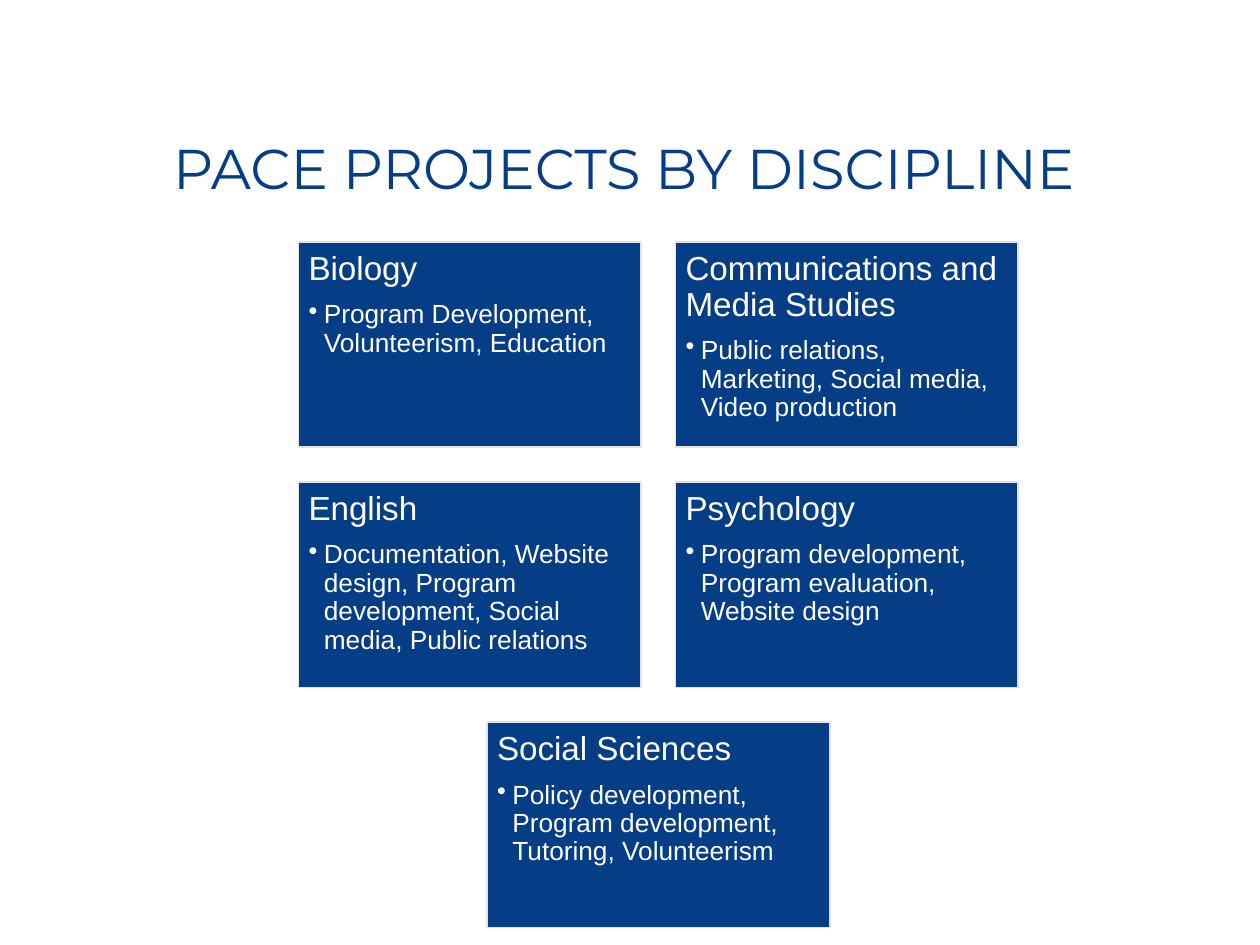
import pptx
import pptx.util
import pptx.dml.color
import pptx.enum.shapes
import pptx.enum.text
from lxml import etree
from pptx.oxml.ns import qn

Cm = pptx.util.Cm
Pt = pptx.util.Pt
RGBColor = pptx.dml.color.RGBColor

BLUE = RGBColor(0x05, 0x3D, 0x87)
TITLE = RGBColor(0x05, 0x3E, 0x87)
EDGE = RGBColor(0xE3, 0xE3, 0xE6)
WHITE = RGBColor(0xFF, 0xFF, 0xFF)

# Card grid, in cm
LEFT, TOP = 6.02, 4.88
WIDTH, HEIGHT = 6.91, 4.14
STEP_X, STEP_Y = 7.6, 4.84

# Column, row, heading, projects
CARDS = [
    (0, 0, "Biology", "Program Development, Volunteerism, Education"),
    (1, 0, "Communications and Media Studies",
     "Public relations, Marketing, Social media, Video production"),
    (0, 1, "English",
     "Documentation, Website design, Program development, "
     "Social media, Public relations"),
    (1, 1, "Psychology",
     "Program development, Program evaluation, Website design"),
    (0.5, 2, "Social Sciences",
     "Policy development, Program development, Tutoring, Volunteerism"),
]


class Deck:
    """Holds the style and the current slide."""

    head_font = "Montserrat"
    body_font = "Arial"

    def __init__(self, slide):
        self.slide = slide

    def run(self, para, text, font, size, color):
        para.line_spacing = 0.9
        run = para.add_run()
        run.text = text
        run.font.name = font
        run.font.size = Pt(size)
        run.font.color.rgb = color

    def bullet(self, para):
        props = para._p.get_or_add_pPr()
        props.set("marL", str(Cm(0.31)))
        props.set("indent", str(-Cm(0.31)))
        etree.SubElement(props, qn("a:buChar")).set("char", "•")

    def title(self, text):
        box = self.slide.shapes.add_textbox(
            Cm(1.52), Cm(2.72), Cm(22.12), Cm(3.02))
        frame = box.text_frame
        frame.word_wrap = True
        para = frame.paragraphs[0]
        para.alignment = pptx.enum.text.PP_ALIGN.CENTER
        self.run(para, text, self.head_font, 32, TITLE)

    def card(self, col, row, head, body):
        box = self.slide.shapes.add_shape(
            pptx.enum.shapes.MSO_SHAPE.RECTANGLE,
            Cm(LEFT + col * STEP_X), Cm(TOP + row * STEP_Y),
            Cm(WIDTH), Cm(HEIGHT))
        box.shadow.inherit = False
        box.fill.solid()
        box.fill.fore_color.rgb = BLUE
        box.line.color.rgb = EDGE
        box.line.width = Pt(1)

        frame = box.text_frame
        frame.word_wrap = True
        frame.vertical_anchor = pptx.enum.text.MSO_ANCHOR.TOP
        frame.margin_left = frame.margin_right = Cm(0.2)
        frame.margin_top = frame.margin_bottom = Cm(0.2)

        # Heading
        para = frame.paragraphs[0]
        para.alignment = pptx.enum.text.PP_ALIGN.LEFT
        para.space_after = Pt(7.6)
        self.run(para, head, self.body_font, 19, WHITE)

        # Projects
        para = frame.add_paragraph()
        para.level = 1
        para.alignment = pptx.enum.text.PP_ALIGN.LEFT
        self.bullet(para)
        self.run(para, body, self.body_font, 15, WHITE)


def main():
    show = pptx.Presentation()
    show.slide_width, show.slide_height = Cm(25.4), Cm(19.05)
    deck = Deck(show.slides.add_slide(show.slide_layouts[6]))

    # Discipline cards
    for card in CARDS:
        deck.card(*card)

    # Title
    deck.title("PACE PROJECTS BY DISCIPLINE")

    show.save("out.pptx")


if __name__ == "__main__":
    main()
